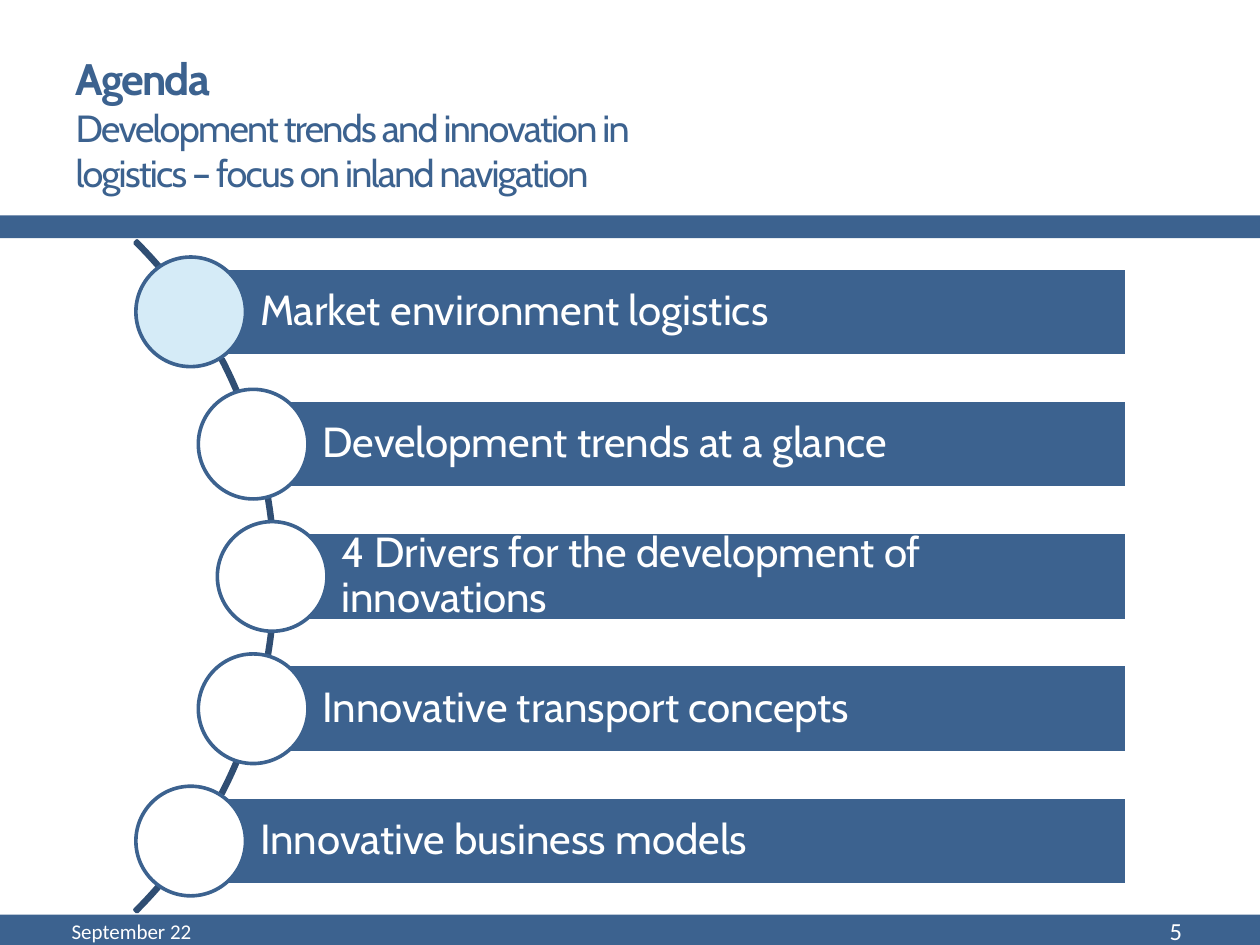
import math

import pptx
from pptx.dml.color import RGBColor
from pptx.enum.shapes import MSO_SHAPE
from pptx.enum.text import MSO_ANCHOR, MSO_AUTO_SIZE, PP_ALIGN
from pptx.util import Inches, Pt

# Content
TITLE = "Agenda"
SUBTITLE = "Development trends and innovation in logistics – focus on inland navigation"
AGENDA = [
    "Market environment logistics",
    "Development trends at a glance",
    "4 Drivers for the development of innovations",
    "Innovative transport concepts",
    "Innovative business models",
]
CURRENT = 0
DATE, PAGE = "September 22", "5"

THEME = {
    "blue": "3C628F", "arc": "304E73", "light": "D5EBF7", "white": "FFFFFF",
    "head": "Cabin", "foot": "Calibri", "line": 2.08,
    "title": 25.2, "subtitle": 21.6, "item": 24, "date": 12, "page": 14,
}

# Layout in inches: the circles sit on an arc around (ARC_X, ARC_Y)
W, H = 10, 7.5
ARC_X, ARC_Y, ARC_R = -1.575, 4.575, 3.765
TRACK_R = 3.735
PITCH, BAR_H, DOT, BAR_RIGHT = 1.05, 0.7, 0.87, 8.94


def color(name):
    return RGBColor.from_string(THEME[name])


def add_text(p, text, size, fill="white", font="head", bold=False, spacing=None):
    r = p.add_run()
    r.text = text
    r.font.name, r.font.size, r.font.bold = THEME[font], Pt(THEME[size]), bold
    r.font.color.rgb = color(fill)
    if spacing is not None:
        r._r.get_or_add_rPr().set("spc", str(spacing))


def add_shape(s, kind, x, y, w, h, fill=None, line=None):
    sp = s.shapes.add_shape(kind, *map(Inches, (x, y, w, h)))
    sp.shadow.inherit = False
    if fill:
        sp.fill.solid()
        sp.fill.fore_color.rgb = color(fill)
    else:
        sp.fill.background()
    if line:
        sp.line.color.rgb = color(line)
        sp.line.width = Pt(THEME["line"])
    else:
        sp.line.fill.background()
    return sp


def add_footer(s, x, w, text, size, align):
    tf = s.shapes.add_textbox(*map(Inches, (x, 7.21, w, 0.36))).text_frame
    tf.word_wrap, tf.vertical_anchor = True, MSO_ANCHOR.MIDDLE
    tf.paragraphs[0].alignment = align
    add_text(tf.paragraphs[0], text, size, font="foot")


def add_item(s, i, text):
    dy = (i - (len(AGENDA) - 1) / 2) * PITCH
    x, y = ARC_X + math.sqrt(TRACK_R ** 2 - dy ** 2), ARC_Y + dy
    bar = add_shape(s, MSO_SHAPE.RECTANGLE, x, y - BAR_H / 2,
                    BAR_RIGHT - x, BAR_H, "blue", "white")
    tf = bar.text_frame
    tf.word_wrap, tf.vertical_anchor = True, MSO_ANCHOR.MIDDLE
    tf.margin_left = Inches(0.55)
    tf.margin_right = tf.margin_top = tf.margin_bottom = Inches(0.07)
    p = tf.paragraphs[0]
    p.alignment, p.line_spacing = PP_ALIGN.LEFT, 0.9
    add_text(p, text, "item")
    add_shape(s, MSO_SHAPE.OVAL, x - DOT / 2, y - DOT / 2, DOT, DOT,
              "light" if i == CURRENT else "white", "blue")


def main():
    prs = pptx.Presentation()
    prs.slide_width, prs.slide_height = Inches(W), Inches(H)
    s = prs.slides.add_slide(prs.slide_layouts[5])

    # Bands
    add_shape(s, MSO_SHAPE.RECTANGLE, 0, 7.26, W, H - 7.26, "blue")
    add_shape(s, MSO_SHAPE.RECTANGLE, 0, 1.71, W, 0.18, "blue")

    # Title
    title = s.shapes.title
    title.left, title.top, title.width, title.height = map(Inches, (0.5, 0.44, 5.21, 1.08))
    tf = title.text_frame
    tf.auto_size, tf.vertical_anchor = MSO_AUTO_SIZE.NONE, MSO_ANCHOR.MIDDLE
    p = tf.paragraphs[0]
    p.alignment = PP_ALIGN.LEFT
    add_text(p, TITLE, "title", "blue", bold=True, spacing=-100)
    p.add_line_break()
    add_text(p, SUBTITLE, "subtitle", "blue", spacing=-100)

    # Footer
    add_footer(s, 0.47, 3.17, DATE, "date", PP_ALIGN.LEFT)
    add_footer(s, 8.31, 1.17, PAGE, "page", PP_ALIGN.RIGHT)

    # Agenda along the arc
    arc = add_shape(s, MSO_SHAPE.BLOCK_ARC, ARC_X - ARC_R, ARC_Y - ARC_R,
                    2 * ARC_R, 2 * ARC_R, line="arc")
    for k, value in enumerate((189, 27, 0.003)):
        arc.adjustments[k] = value
    for i, text in enumerate(AGENDA):
        add_item(s, i, text)

    prs.save("out.pptx")


if __name__ == "__main__":
    main()
